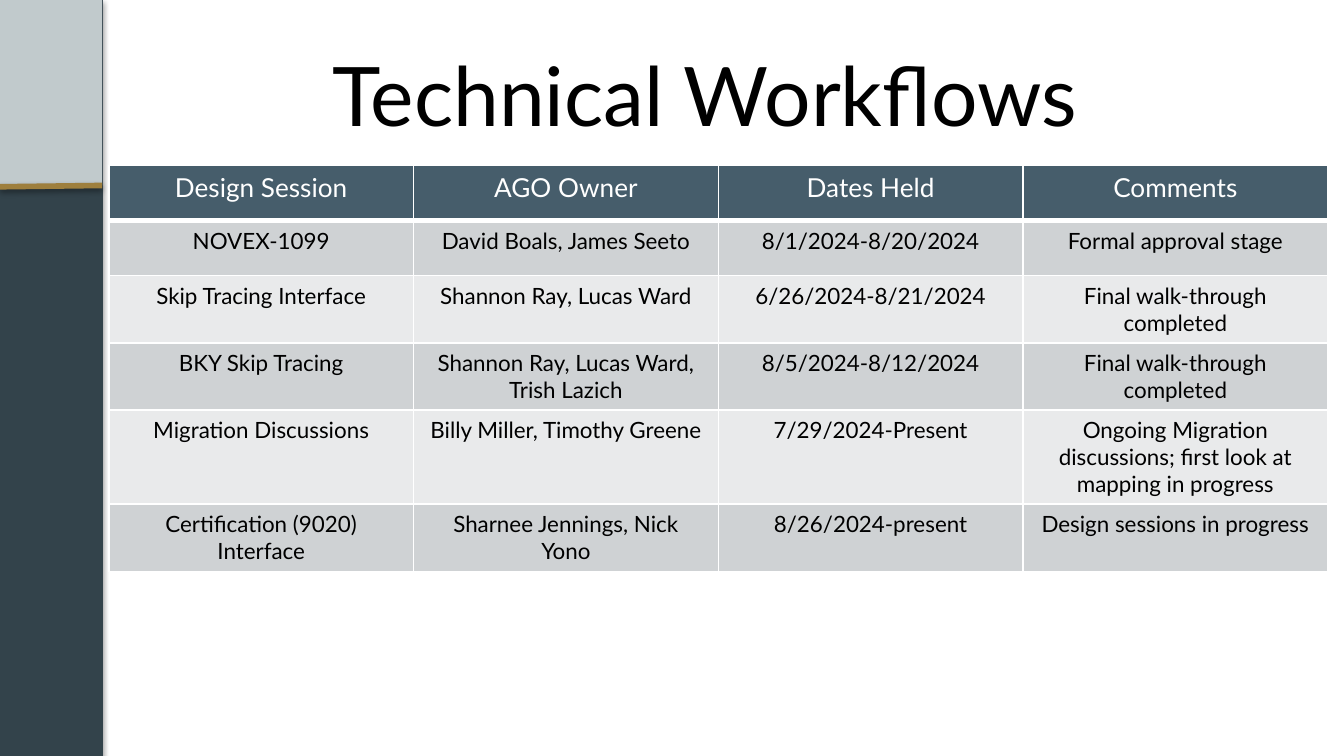
"""Build the Technical Workflows slide with its sidebar and session table."""
from lxml.etree import SubElement
from pptx import Presentation
from pptx.dml.color import RGBColor
from pptx.enum.shapes import MSO_CONNECTOR as Connector, MSO_SHAPE as Shape
from pptx.enum.text import MSO_ANCHOR as Anchor, MSO_AUTO_SIZE as AutoSize, PP_ALIGN as Align
from pptx.oxml import parse_xml
from pptx.oxml.ns import nsdecls, qn
from pptx.util import Inches, Pt

TITLE = "Technical Workflows"
HEADERS = ["Design Session", "AGO Owner", "Dates Held", "Comments"]
SESSIONS = [
    ["NOVEX-1099", "David Boals, James Seeto", "8/1/2024-8/20/2024", "Formal approval stage"],
    ["Skip Tracing Interface", "Shannon Ray, Lucas Ward", "6/26/2024-8/21/2024",
     "Final walk-through completed"],
    ["BKY Skip Tracing", "Shannon Ray, Lucas Ward, Trish Lazich", "8/5/2024-8/12/2024",
     "Final walk-through completed"],
    ["Migration Discussions", "Billy Miller, Timothy Greene", "7/29/2024-Present",
     "Ongoing Migration discussions; first look at mapping in progress"],
    ["Certification (9020) Interface", "Sharnee Jennings, Nick Yono", "8/26/2024-present",
     "Design sessions in progress"],
]
THEME = {
    "font": "Lato", "title_size": 44, "header_size": 14, "body_size": 12,
    "text": "000000", "light": "FFFFFF", "header": "465D6B",
    "bands": ["CFD2D4", "E9EAEB"],
    "sidebar": "33434B", "panel": "C1CACC", "accent": "9E7F3D",
}
PAGE_WIDTH = 10
PAGE_HEIGHT = PAGE_WIDTH * 9 / 16
SIDEBAR_WIDTH, PANEL_HEIGHT = 0.76, 1.38
TABLE_LEFT, TABLE_TOP, TABLE_WIDTH, ROW_HEIGHT = 0.81, 1.23, 9.07, 0.41


def color(name):
    return RGBColor.from_string(THEME.get(name, name))


def write(frame, text, size, ink="text"):
    para = frame.paragraphs[0]
    para.alignment = Align.CENTER
    span = para.add_run()
    span.text = text
    span.font.name = THEME["font"]
    span.font.size = Pt(THEME[size])
    span.font.color.rgb = color(ink)


def add_shadow(shape, distance, opacity):
    properties = shape._element.spPr
    effects = properties.find(qn("a:effectLst"))
    if effects is None:
        effects = SubElement(properties, qn("a:effectLst"))
    effects.append(parse_xml(
        f'<a:outerShdw {nsdecls("a")} blurRad="{Pt(3.1)}" dist="{Pt(distance)}" dir="5400000" '
        f'rotWithShape="0"><a:srgbClr val="000000"><a:alpha val="{opacity * 1000}"/>'
        '</a:srgbClr></a:outerShdw>'))


def add_block(page, height, fill):
    block = page.shapes.add_shape(Shape.RECTANGLE, 0, 0, Inches(SIDEBAR_WIDTH), Inches(height))
    block.shadow.inherit = False
    block.fill.solid()
    block.fill.fore_color.rgb = color(fill)
    block.line.fill.background()
    return block


def add_sidebar(page):
    sidebar = add_block(page, PAGE_HEIGHT, "sidebar")
    sidebar.line.color.rgb = color("sidebar")
    sidebar.line.width = Pt(0.75)
    add_shadow(sidebar, 1.8, 35)
    add_block(page, PANEL_HEIGHT, "panel")
    rule = page.shapes.add_connector(
        Connector.STRAIGHT, 0, Inches(PANEL_HEIGHT + 0.01),
        Inches(SIDEBAR_WIDTH), Inches(PANEL_HEIGHT))
    rule.line.color.rgb = color("accent")
    rule.line.width = Pt(3)
    add_shadow(rule, 1.6, 38)


def add_title(page):
    title = page.shapes.title
    title.left, title.top = Inches(0.99), Inches(0.23)
    title.width, title.height = Inches(8.51), Inches(0.94)
    title.text_frame.vertical_anchor = Anchor.MIDDLE
    title.text_frame.auto_size = AutoSize.NONE
    write(title.text_frame, TITLE, "title_size")


def set_borders(cell, bottom):
    properties = cell._tc.get_or_add_tcPr()
    for index, (side, width) in enumerate([("L", 1), ("R", 1), ("T", 1), ("B", bottom)]):
        properties.insert(index, parse_xml(
            f'<a:ln{side} {nsdecls("a")} w="{Pt(width)}"><a:solidFill>'
            f'<a:srgbClr val="{THEME["light"]}"/></a:solidFill></a:ln{side}>'))


def add_session_table(page):
    rows = [HEADERS, *SESSIONS]
    table = page.shapes.add_table(
        len(rows), len(HEADERS), Inches(TABLE_LEFT), Inches(TABLE_TOP),
        Inches(TABLE_WIDTH), Inches(ROW_HEIGHT * len(rows))).table
    for column in table.columns:
        column.width = Inches(TABLE_WIDTH / len(HEADERS))
    for row_index, texts in enumerate(rows):
        is_header = row_index == 0
        table.rows[row_index].height = Inches(ROW_HEIGHT)
        fill = "header" if is_header else THEME["bands"][(row_index - 1) % 2]
        for column_index, text in enumerate(texts):
            cell = table.cell(row_index, column_index)
            cell.fill.solid()
            cell.fill.fore_color.rgb = color(fill)
            set_borders(cell, bottom=3 if is_header else 1)
            write(cell.text_frame, text, "header_size" if is_header else "body_size",
                  ink="light" if is_header else "text")


def main():
    deck = Presentation()
    deck.slide_width, deck.slide_height = Inches(PAGE_WIDTH), Inches(PAGE_HEIGHT)
    page = deck.slides.add_slide(deck.slide_layouts[5])
    add_sidebar(page)
    add_title(page)
    add_session_table(page)
    deck.save("out.pptx")


if __name__ == "__main__":
    main()
